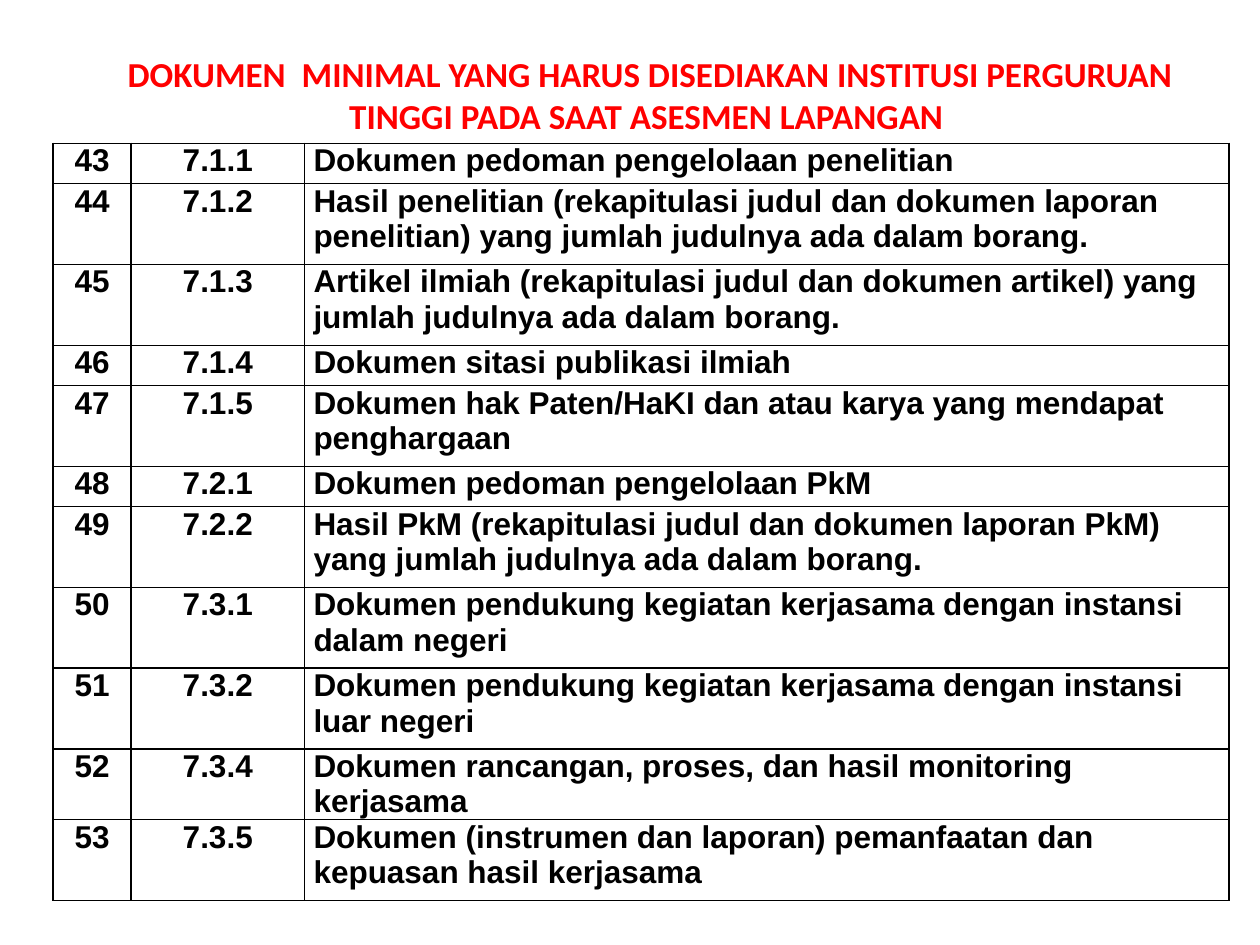
from lxml import etree
from pptx import Presentation
from pptx import util as u
from pptx.dml.color import RGBColor
from pptx.enum import text
from pptx.oxml.ns import qn


def color(value):
    return RGBColor.from_string(value)


def format_paragraph(paragraph, alignment, size, name, value):
    paragraph.alignment = alignment
    font = paragraph.runs[0].font
    for key, setting in {"size": u.Pt(size), "name": name, "bold": True}.items():
        setattr(font, key, setting)
    font.color.rgb = color(value)


presentation = Presentation()
presentation.slide_width, presentation.slide_height = u.Cm(25.4), u.Cm(19.05)
slide = presentation.slides.add_slide(presentation.slide_layouts[5])

title = slide.shapes.title
place = {"left": 1.7, "top": 0.64, "width": 22.66, "height": 2.54}
for key, value in place.items():
    setattr(title, key, u.Cm(value))
frame = title.text_frame
frame.text = (" DOKUMEN  MINIMAL YANG HARUS DISEDIAKAN INSTITUSI PERGURUAN "
              "TINGGI PADA SAAT ASESMEN LAPANGAN")
frame_format = {"word_wrap": True, "auto_size": text.MSO_AUTO_SIZE.NONE,
                "vertical_anchor": text.MSO_ANCHOR.MIDDLE}
for key, value in frame_format.items():
    setattr(frame, key, value)
format_paragraph(frame.paragraphs[0], text.PP_ALIGN.CENTER, 20, "Calibri", "FF0000")

single, double, tight = 0.81, 1.63, 1.42
first_number = 43
documents = [
    ("7.1.1", "Dokumen pedoman pengelolaan penelitian", single),
    ("7.1.2", "Hasil penelitian (rekapitulasi judul dan dokumen laporan penelitian) "
              "yang jumlah judulnya ada dalam borang.", double),
    ("7.1.3", "Artikel ilmiah (rekapitulasi judul dan dokumen artikel) "
              "yang jumlah judulnya ada dalam borang.", double),
    ("7.1.4", "Dokumen sitasi publikasi ilmiah", single),
    ("7.1.5", "Dokumen hak Paten/HaKI dan atau karya yang mendapat penghargaan", double),
    ("7.2.1", "Dokumen pedoman pengelolaan PkM", single),
    ("7.2.2", "Hasil PkM (rekapitulasi judul dan dokumen laporan PkM) "
              "yang jumlah judulnya ada dalam borang.", double),
    ("7.3.1", "Dokumen pendukung kegiatan kerjasama dengan instansi dalam negeri", double),
    ("7.3.2", "Dokumen pendukung kegiatan kerjasama dengan instansi luar negeri", double),
    ("7.3.4", "Dokumen rancangan, proses, dan hasil monitoring kerjasama", tight),
    ("7.3.5", "Dokumen (instrumen dan laporan) pemanfaatan dan kepuasan hasil kerjasama",
     double),
]
column_widths = [1.57, 3.5, 18.64]
table_height = sum(height for _, _, height in documents)
table = slide.shapes.add_table(len(documents), len(column_widths), u.Cm(1.07), u.Cm(2.89),
                               u.Cm(sum(column_widths)), u.Cm(table_height)).table
table.first_row = table.horz_banding = False
for column, width in zip(table.columns, column_widths):
    column.width = u.Cm(width)

cell_format = {"margin_left": u.Cm(0.18), "margin_right": u.Cm(0.18),
               "margin_top": 0, "margin_bottom": 0,
               "vertical_anchor": text.MSO_ANCHOR.TOP}
center, left, justify = text.PP_ALIGN.CENTER, text.PP_ALIGN.LEFT, text.PP_ALIGN.JUSTIFY
for index, (code, document, height) in enumerate(documents):
    table.rows[index].height = u.Cm(height)
    document_alignment = justify if code == "7.2.1" else left
    alignments = [center, center, document_alignment]
    values = [str(first_number + index), code, document]
    for cell, value, alignment in zip(table.rows[index].cells, values, alignments):
        cell.text = value
        for key, setting in cell_format.items():
            setattr(cell, key, setting)
        format_paragraph(cell.text_frame.paragraphs[0], alignment, 18, "Arial", "000000")
        properties = cell._tc.get_or_add_tcPr()
        for side in ("a:lnL", "a:lnR", "a:lnT", "a:lnB"):
            border = etree.SubElement(properties, qn(side), w=str(u.Pt(1)))
            fill = etree.SubElement(border, qn("a:solidFill"))
            etree.SubElement(fill, qn("a:srgbClr"), val="000000")
        cell.fill.background()

presentation.save("out.pptx")
